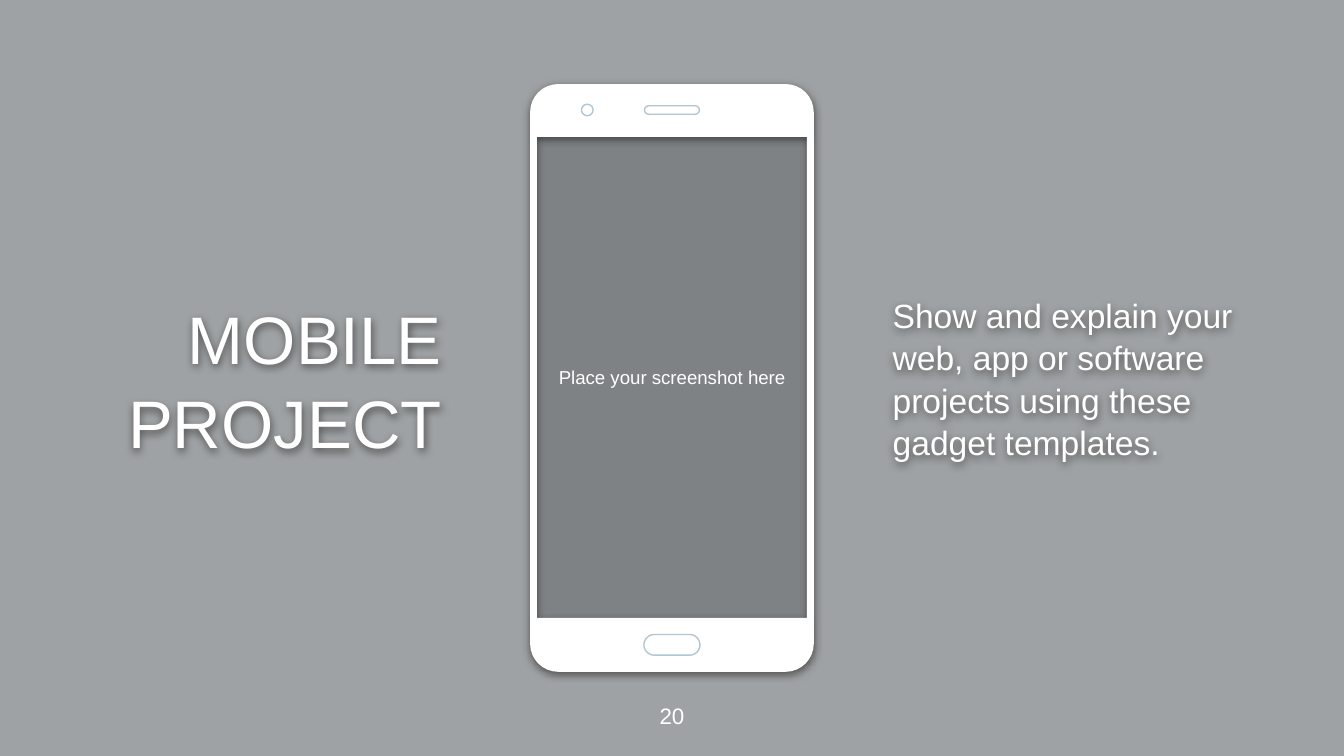
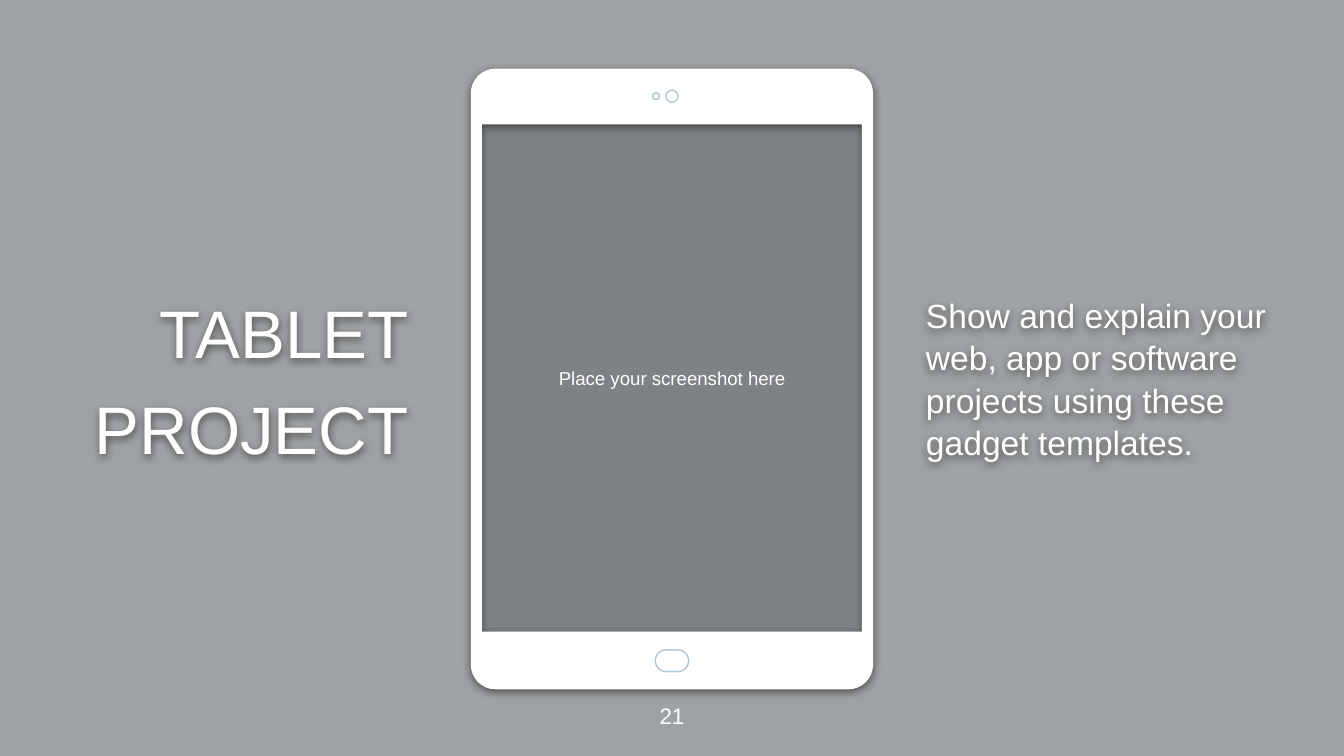
from math import cos, pi, sin

from pptx import Presentation
from pptx.dml.color import RGBColor
from pptx.enum.shapes import MSO_SHAPE
from pptx.enum.text import MSO_ANCHOR, MSO_AUTO_SIZE, PP_ALIGN
from pptx.oxml import parse_xml
from pptx.oxml.ns import nsdecls, qn
from pptx.oxml.xmlchemy import OxmlElement
from pptx.util import Cm, Pt

COLORS = {"white": "FFFFFF", "shade": "040E11", "edge": "B0C6D3", "black": "000000"}
FONT = "Arial"
WIDE, HIGH = 25.4, 14.29
MID = WIDE / 2
PITCH = "Show and explain your web, app or software projects using these gadget templates."
HINT = "Place your screenshot here"

PHONE = {
    "case": (5.36, 1.59, 11.11, 0.53),
    "screen": (5.1, 2.59, 9.09),
    "parts": [(MID, 12.19, 1.06, 0.39), (11.1, 2.08, 0.22, 0.22), (MID, 2.08, 1.04, 0.16)],
}
TABLET = {
    "case": (7.6, 1.3, 11.73, 0.46),
    "screen": (7.18, 2.35, 9.59),
    "parts": [(MID, 12.49, 0.63, 0.41), (12.4, 1.82, 0.13, 0.13), (MID, 1.82, 0.23, 0.23)],
}


def color(name):
    return RGBColor.from_string(COLORS[name])


def paint(shape, fill, line=None):
    shape.shadow.inherit = False
    shape.fill.solid()
    shape.fill.fore_color.rgb = color(fill)
    if line:
        shape.line.color.rgb = color(line)
        shape.line.width = Pt(0.75)
    else:
        shape.line.fill.background()


def add_shadow(shape):
    shape.shadow.inherit = False
    effects = shape._element.spPr.find(qn("a:effectLst"))
    effects.append(parse_xml(
        f'<a:outerShdw {nsdecls("a")} blurRad="{Pt(4.5)}" dist="{Pt(1.5)}" dir="5400000" '
        f'algn="t" rotWithShape="0"><a:srgbClr val="{COLORS["black"]}">'
        '<a:alpha val="50000"/></a:srgbClr></a:outerShdw>'))


def add_shade(slide, left, top, width, height):
    shade = slide.shapes.add_shape(
        MSO_SHAPE.RECTANGLE, Cm(left), Cm(top), Cm(width), Cm(height))
    paint(shade, "shade")
    alpha = OxmlElement("a:alpha")
    alpha.set("val", "21000")
    shade._element.spPr.find(qn("a:solidFill"))[0].append(alpha)
    return shade


def add_veil(slide, home):
    veil = add_shade(slide, 0, -0.01, WIDE, HIGH + 0.01)
    home.shapes._spTree.insert(2, veil._element)


def set_text(shape, text, size, align, inset=0):
    frame = shape.text_frame
    frame.text = text
    frame.word_wrap = True
    frame.auto_size = MSO_AUTO_SIZE.NONE
    frame.vertical_anchor = MSO_ANCHOR.MIDDLE
    frame.margin_left = frame.margin_right = Cm(inset)
    frame.margin_top = frame.margin_bottom = Cm(inset)
    for index, para in enumerate(frame.paragraphs):
        para.alignment = align
        para.space_before = Pt(6 if index else 0)
        for run in para.runs:
            run.font.size = Pt(size)
            run.font.name = FONT
            run.font.color.rgb = color("white")


def set_holder(holder, left, text, size, align):
    holder.left, holder.top = Cm(left), Cm(4.9)
    holder.width, holder.height = Cm(6.65), Cm(4.47)
    set_text(holder, text, size, align)
    for para in holder.text_frame.paragraphs:
        para.line_spacing = 1.05
        props = para._p.get_or_add_pPr()
        props.set("marL", "0")
        props.set("indent", "0")
        props.append(OxmlElement("a:buNone"))
    add_shadow(holder)


def round_points(left, top, width, height, radius, steps=8):
    right, bottom = left + width - radius, top + height - radius
    left, top = left + radius, top + radius
    hubs = [(right, bottom), (left, bottom), (left, top), (right, top)]
    points = []
    for turn, (x, y) in enumerate(hubs):
        for step in range(steps + 1):
            angle = (turn + step / steps) * pi / 2
            points.append((Cm(x + radius * cos(angle)), Cm(y + radius * sin(angle))))
    return points


def add_case(slide, case, screen):
    width, top, height, radius = case
    outer = round_points(MID - width / 2, top, width, height, radius)
    width, top, height = screen
    left, right = Cm(MID - width / 2), Cm(MID + width / 2)
    top, bottom = Cm(top), Cm(top + height)
    pen = slide.shapes.build_freeform(*outer[0])
    pen.add_line_segments(outer[1:])
    pen.move_to(left, top)
    pen.add_line_segments([(left, bottom), (right, bottom), (right, top)])
    shape = pen.convert_to_shape()
    paint(shape, "white")
    add_shadow(shape)


def add_part(slide, x, y, width, height):
    kind = MSO_SHAPE.OVAL if width == height else MSO_SHAPE.ROUNDED_RECTANGLE
    part = slide.shapes.add_shape(
        kind, Cm(x - width / 2), Cm(y - height / 2), Cm(width), Cm(height))
    if width != height:
        part.adjustments[0] = 0.5
    paint(part, "white", "edge")


def add_device(slide, device):
    width, top, height = device["screen"]
    screen = add_shade(slide, MID - width / 2, top, width, height)
    set_text(screen, HINT, 10, PP_ALIGN.CENTER, 0.25)
    add_case(slide, device["case"], device["screen"])
    for part in device["parts"]:
        add_part(slide, *part)


def add_number(slide, number):
    box = slide.shapes.add_textbox(Cm(MID - 0.76), Cm(12.76), Cm(1.52), Cm(1.52))
    set_text(box, str(number), 12, PP_ALIGN.CENTER)


def add_page(deck, layout, number, title, device, left, right):
    slide = deck.slides.add_slide(layout)
    add_veil(slide, slide)
    set_holder(slide.shapes.title, left, title, 36, PP_ALIGN.RIGHT)
    set_holder(slide.placeholders[1], right, PITCH, 18, PP_ALIGN.LEFT)
    add_device(slide, device)
    add_number(slide, number)
    return slide


def main():
    deck = Presentation()
    deck.slide_width, deck.slide_height = Cm(WIDE), Cm(HIGH)
    layout = deck.slide_layouts[1]
    first = add_page(deck, layout, 20, "MOBILE PROJECT", PHONE, 1.7, 16.87)
    add_page(deck, layout, 21, "TABLET\nPROJECT", TABLET, 1.07, 17.5)
    add_veil(first, deck.slide_master)
    deck.save("out.pptx")


if __name__ == "__main__":
    main()
